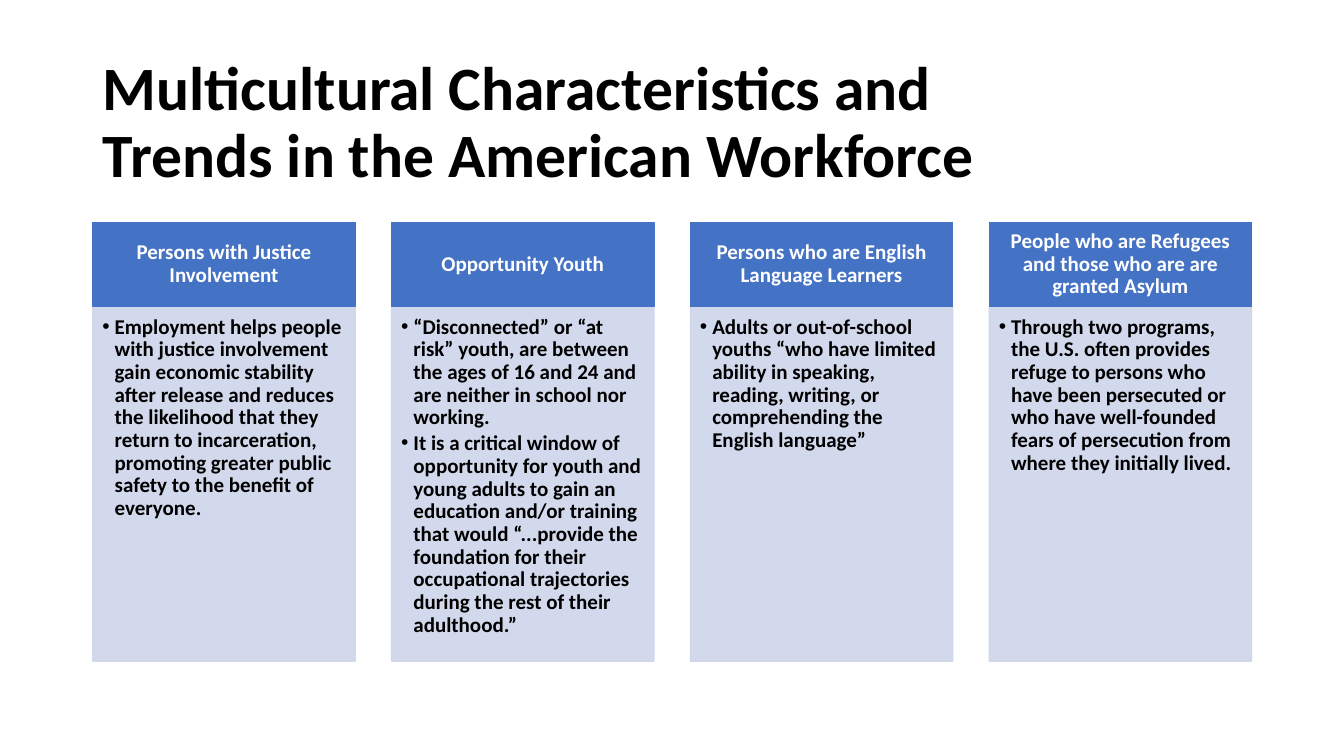
"""Build a slide of four workforce groups, each with a heading and a bulleted list."""
from dataclasses import dataclass

from lxml import etree
from pptx import Presentation
from pptx import util as u
from pptx.dml.color import RGBColor
from pptx.enum import shapes, text
from pptx.oxml.ns import qn

BLACK = RGBColor(0x00, 0x00, 0x00)
WHITE = RGBColor(0xFF, 0xFF, 0xFF)
BLUE = RGBColor(0x44, 0x72, 0xC4)
PALE_BLUE = RGBColor(0xCF, 0xD5, 0xEA)
FONT_NAME = "Calibri"

COLUMN_LEFT, COLUMN_PITCH, COLUMN_WIDTH = 2.34, 7.53, 6.61
HEADING_TOP, HEADING_HEIGHT, LIST_HEIGHT = 5.61, 2.11, 8.94
LIST_TOP = HEADING_TOP + HEADING_HEIGHT
BULLET_INDENT = u.Cm(0.31)
COMPARISON_LAYOUT = 5 - 1


@dataclass(frozen=True)
class Group:
    heading: str
    points: tuple[str, ...]


GROUPS = (
    Group("Persons with Justice Involvement", (
        "Employment helps people with justice involvement gain economic stability "
        "after release and reduces the likelihood that they return to incarceration, "
        "promoting greater public safety to the benefit of everyone.",
    )),
    Group("Opportunity Youth", (
        "“Disconnected” or “at risk” youth, are between the ages of 16 and 24 "
        "and are neither in school nor working.",
        "It is a critical window of opportunity for youth and young adults to gain an "
        "education and/or training that would “...provide the foundation for their "
        "occupational trajectories during the rest of their adulthood.”",
    )),
    Group("Persons who are English Language Learners", (
        "Adults or out-of-school youths “who have limited ability in speaking, "
        "reading, writing, or comprehending the English language”",
    )),
    Group("People who are Refugees and those who are are granted Asylum", (
        "Through two programs, the U.S. often provides refuge to persons who have been "
        "persecuted or who have well-founded fears of persecution from where they "
        "initially lived.",
    )),
)


def place(shape, left: float, top: float, width: float, height: float) -> None:
    """Move and size a shape, in centimetres."""
    shape.left, shape.top = u.Cm(left), u.Cm(top)
    shape.width, shape.height = u.Cm(width), u.Cm(height)


def paint(shape, color: RGBColor) -> None:
    """Give a shape the same fill and outline colour."""
    shape.fill.solid()
    shape.fill.fore_color.rgb = color
    shape.line.color.rgb = color
    shape.line.width = u.Pt(1)


def set_opacity(shape, percent: int) -> None:
    """Make the fill and outline of a shape partly transparent."""
    for color in shape.element.spPr.iter(qn("a:srgbClr")):
        etree.SubElement(color, qn("a:alpha"), val=str(percent * 1000))


def format_text(frame, size: int, color: RGBColor, alignment, anchor) -> None:
    """Format all text of a frame in bold at nine tenths line spacing."""
    frame.word_wrap = True
    frame.auto_size = text.MSO_AUTO_SIZE.NONE
    frame.vertical_anchor = anchor
    for paragraph in frame.paragraphs:
        paragraph.alignment = alignment
        paragraph.line_spacing = 0.9
        paragraph.space_before = u.Pt(0)
        for run in paragraph.runs:
            run.font.name = FONT_NAME
            run.font.size = u.Pt(size)
            run.font.bold = True
            run.font.color.rgb = color


def set_margins(frame, left: float, top: float, right: float, bottom: float) -> None:
    """Set the inner margins of a text frame, in centimetres."""
    frame.margin_left, frame.margin_top = u.Cm(left), u.Cm(top)
    frame.margin_right, frame.margin_bottom = u.Cm(right), u.Cm(bottom)


def add_bullet(paragraph) -> None:
    """Give a paragraph a hanging round bullet."""
    properties = paragraph._p.get_or_add_pPr()
    properties.set("marL", str(BULLET_INDENT))
    properties.set("indent", str(-BULLET_INDENT))
    etree.SubElement(properties, qn("a:buChar"), char="•")


def draw_heading(slide, heading: str, left: float) -> None:
    """Draw the blue heading box of a column."""
    shape = slide.shapes.add_shape(shapes.MSO_SHAPE.RECTANGLE, 0, 0, 0, 0)
    place(shape, left, HEADING_TOP, COLUMN_WIDTH, HEADING_HEIGHT)
    shape.shadow.inherit = False
    paint(shape, BLUE)
    frame = shape.text_frame
    frame.text = heading
    set_margins(frame, 0.3, 0.17, 0.3, 0.17)
    format_text(frame, 15, WHITE, text.PP_ALIGN.CENTER, text.MSO_ANCHOR.MIDDLE)


def fill_list(placeholder, points: tuple[str, ...], left: float) -> None:
    """Turn a body placeholder into the pale list box of a column."""
    place(placeholder, left, LIST_TOP, COLUMN_WIDTH, LIST_HEIGHT)
    paint(placeholder, PALE_BLUE)
    set_opacity(placeholder, 90)
    frame = placeholder.text_frame
    frame.text = "\n".join(points)
    set_margins(frame, 0.24, 0.24, 0.3, 0.34)
    format_text(frame, 15, BLACK, text.PP_ALIGN.LEFT, text.MSO_ANCHOR.TOP)
    for paragraph in frame.paragraphs:
        paragraph.space_after = u.Pt(2.25)
        add_bullet(paragraph)


def main() -> None:
    """Build and save the presentation."""
    presentation = Presentation()
    presentation.slide_width, presentation.slide_height = u.Cm(33.87), u.Cm(19.05)
    slide = presentation.slides.add_slide(presentation.slide_layouts[COMPARISON_LAYOUT])

    title, *lists = slide.placeholders
    place(title, COLUMN_LEFT, 1.55, 29.21, 3.15)
    title.text_frame.text = "Multicultural Characteristics and\vTrends in the American Workforce"
    format_text(title.text_frame, 44, BLACK, text.PP_ALIGN.LEFT, text.MSO_ANCHOR.MIDDLE)

    for index, (group, placeholder) in enumerate(zip(GROUPS, lists)):
        left = COLUMN_LEFT + index * COLUMN_PITCH
        draw_heading(slide, group.heading, left)
        fill_list(placeholder, group.points, left)

    presentation.save("out.pptx")


if __name__ == "__main__":
    main()
